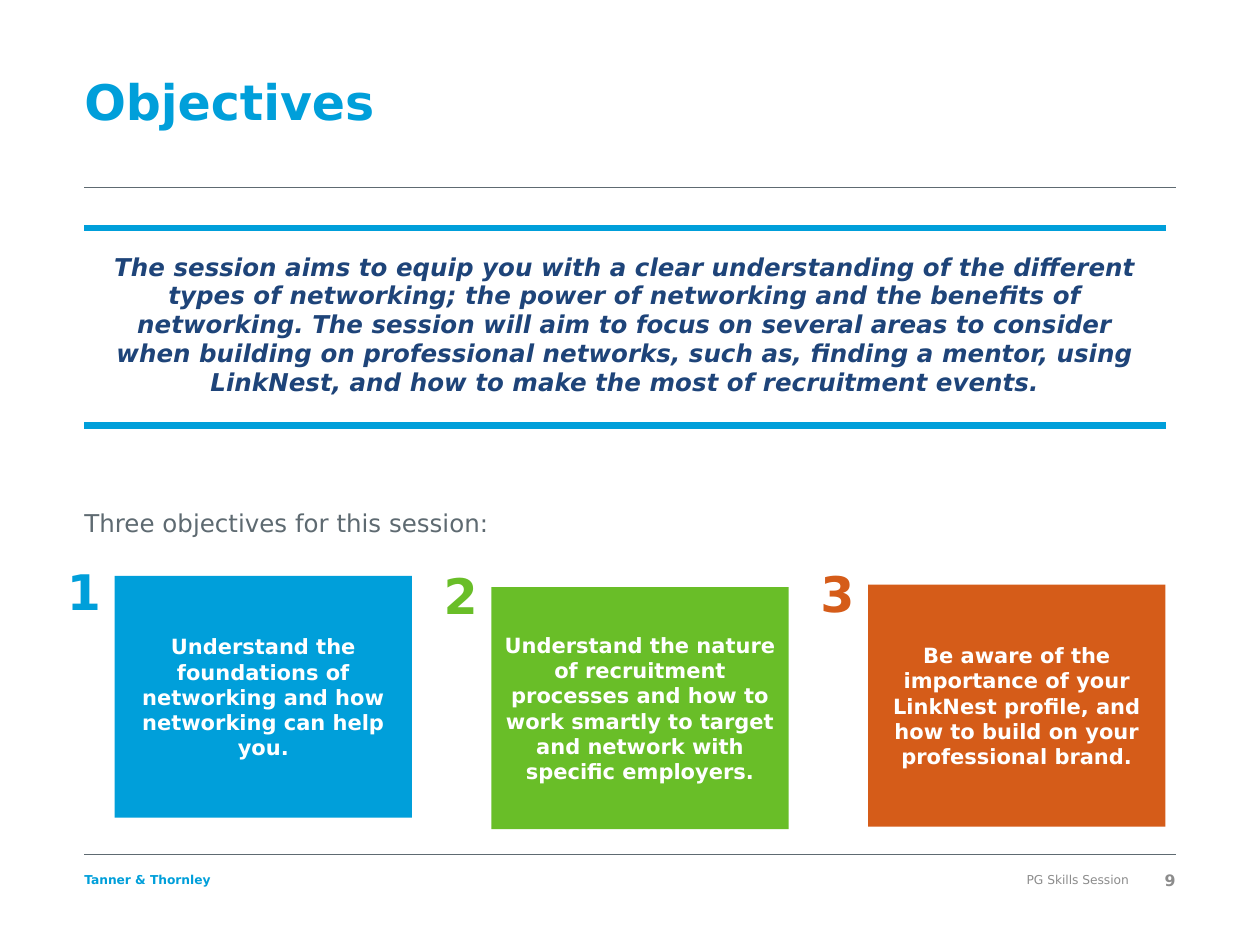
from pptx import Presentation
from pptx.dml.color import RGBColor
from pptx.enum.shapes import MSO_CONNECTOR, MSO_SHAPE
from pptx.enum.text import MSO_ANCHOR as Anchor, PP_ALIGN as Align
from pptx.oxml import parse_xml
from pptx.oxml.ns import nsdecls
from pptx.util import Inches, Pt

BLUE = RGBColor(0x00, 0x9F, 0xDA)
GREEN = RGBColor(0x69, 0xBE, 0x28)
ORANGE = RGBColor(0xD5, 0x5C, 0x19)
NAVY = RGBColor(0x1E, 0x44, 0x79)
SLATE = RGBColor(0x5E, 0x6A, 0x71)
GREY = RGBColor(0x8C, 0x8C, 0x8C)
WHITE = RGBColor(0xFF, 0xFF, 0xFF)

LEFT = 0.67
WIDTH = 8.66
FOOTER_TOP = 6.85
FOOTER_HEIGHT = 0.27
CARD_LEFT = 0.91
CARD_STEP = 2.99

AIM = (
    "The session aims to equip you with a clear understanding of the different "
    "types of networking; the power of networking and the benefits of networking. "
    "The session will aim to focus on several areas to consider when building on "
    "professional networks, such as, finding a mentor, using LinkNest, and how to "
    "make the most of recruitment events."
)
OBJECTIVES = [
    (BLUE, 4.46, 4.57,
     "Understand the foundations of networking and how networking can help you."),
    (GREEN, 4.49, 4.66,
     "Understand the nature of recruitment processes and how to work smartly "
     "to target and network with specific employers."),
    (ORANGE, 4.47, 4.64,
     "Be aware of the importance of your LinkNest profile, and how to build on "
     "your professional brand."),
]


class SlideBuilder:
    font = "DejaVu Sans"

    def __init__(self, slide):
        self.slide = slide

    def set_words(self, frame, words, size, color, bold=False, italic=False, align=Align.LEFT):
        frame.text = words
        frame.word_wrap = True
        paragraph = frame.paragraphs[0]
        paragraph.alignment = align
        font = paragraph.runs[0].font
        font.name, font.size = self.font, Pt(size)
        font.bold, font.italic = bold, italic
        font.color.rgb = color

    def text(self, box, words, size, color, anchor=Anchor.MIDDLE, **style):
        frame = self.slide.shapes.add_textbox(*map(Inches, box)).text_frame
        frame.margin_left = frame.margin_right = 0
        frame.margin_top = frame.margin_bottom = 0
        frame.vertical_anchor = anchor
        self.set_words(frame, words, size, color, **style)

    def rule(self, top):
        rule = self.slide.shapes.add_connector(
            MSO_CONNECTOR.STRAIGHT,
            Inches(LEFT), Inches(top), Inches(LEFT + WIDTH), Inches(top))
        rule.line.color.rgb = SLATE
        rule.line.width = Pt(0.25)
        rule._element.spPr.append(parse_xml(f"<a:effectLst {nsdecls('a')}/>"))

    def card(self, box, words, color):
        card = self.slide.shapes.add_shape(MSO_SHAPE.RECTANGLE, *map(Inches, box))
        card.shadow.inherit = False
        card.fill.solid()
        card.fill.fore_color.rgb = color
        card.line.fill.background()
        card.text_frame.vertical_anchor = Anchor.MIDDLE
        self.set_words(card.text_frame, words, 12, WHITE, bold=True, align=Align.CENTER)

    def banner(self, box, words):
        table = self.slide.shapes.add_table(1, 1, *map(Inches, box)).table
        table.first_row = table.horz_banding = False
        cell = table.cell(0, 0)
        cell.margin_left = cell.margin_right = Inches(0.1)
        cell.margin_top = cell.margin_bottom = Inches(0.2)
        borders = cell._tc.get_or_add_tcPr()
        bar = f'<a:solidFill><a:srgbClr val="{BLUE}"/></a:solidFill>'
        for side, paint in zip("LRTB", ["<a:noFill/>"] * 2 + [bar] * 2):
            borders.append(parse_xml(
                f'<a:ln{side} {nsdecls("a")} w="{Pt(4.5)}">{paint}</a:ln{side}>'))
        cell.fill.solid()
        cell.fill.fore_color.rgb = WHITE
        self.set_words(cell.text_frame, words, 14, NAVY,
                       bold=True, italic=True, align=Align.CENTER)


def main():
    deck = Presentation()
    deck.slide_width, deck.slide_height = Inches(10), Inches(7.5)
    builder = SlideBuilder(deck.slides.add_slide(deck.slide_layouts[6]))

    for top in (1.49, 6.78):
        builder.rule(top)
    builder.text((LEFT, 0.29, WIDTH, 1.02), "Objectives", 28, BLUE, bold=True)
    builder.banner((LEFT, 1.81, 8.58, 1.54), AIM)
    builder.text((LEFT, 4.03, WIDTH, 0.3), "Three objectives for this session:",
                 14, SLATE, anchor=Anchor.TOP)

    for index, (color, number_top, card_top, goal) in enumerate(OBJECTIVES):
        left = CARD_LEFT + index * CARD_STEP
        builder.card((left, card_top, 2.36, 1.92), goal, color)
        builder.text((left - 0.52, number_top, 0.55, 0.89), str(index + 1), 28, color,
                     anchor=Anchor.TOP, bold=True, align=Align.CENTER)

    builder.text((LEFT, FOOTER_TOP, 2.68, FOOTER_HEIGHT), "Tanner & Thornley",
                 7, BLUE, bold=True)
    builder.text((3.9, FOOTER_TOP, 5.06, FOOTER_HEIGHT), "PG Skills Session",
                 7, GREY, align=Align.RIGHT)
    builder.text((8.95, FOOTER_TOP, 0.38, FOOTER_HEIGHT), "9",
                 9, GREY, bold=True, align=Align.RIGHT)

    deck.save("out.pptx")


if __name__ == "__main__":
    main()
